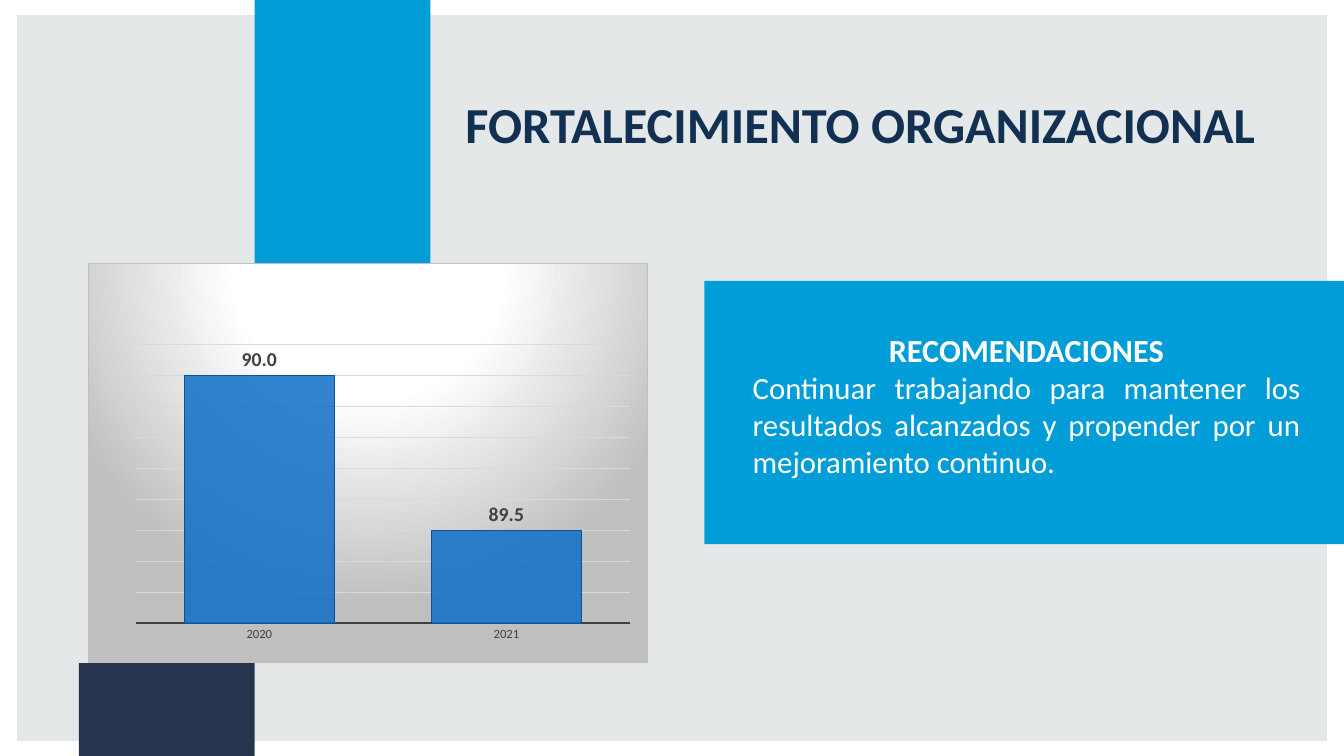
from lxml import etree
from pptx import Presentation
from pptx.chart.data import CategoryChartData
from pptx.dml.color import RGBColor
from pptx.enum import chart as ch, shapes, text
from pptx.oxml import parse_xml
from pptx.oxml.ns import nsdecls, qn
from pptx.util import Cm, Pt

FONT = "Calibri"
COLORS = {
    "panel": "E4E8E9", "accent": "009DD9", "navy": "26354D", "title": "113052",
    "white": "FFFFFF", "label": "404040", "grid": "D9D9D9", "frame": "BFBFBF",
    "bar": "0F6FC6", "bar_edge": "0B5394",
}


def rgb(name):
    return RGBColor.from_string(COLORS[name])


def set_font(font, size, color, bold=False):
    font.name, font.size, font.bold = FONT, Pt(size), bold
    font.color.rgb = rgb(color)


def set_line(line, color, width):
    line.color.rgb = rgb(color)
    line.width = Pt(width)


def add_block(page, box, color):
    block = page.shapes.add_shape(shapes.MSO_SHAPE.RECTANGLE, *map(Cm, box))
    block.shadow.inherit = False
    block.fill.solid()
    block.fill.fore_color.rgb = rgb(color)
    block.line.fill.background()


def add_text(page, box, paragraphs, anchor=text.MSO_ANCHOR.TOP, spacing=None):
    """Write (words, size, color, bold, alignment) paragraphs in a box."""
    frame = page.shapes.add_textbox(*map(Cm, box)).text_frame
    frame.word_wrap = True
    frame.vertical_anchor = anchor
    for index, (words, size, color, bold, alignment) in enumerate(paragraphs):
        para = frame.add_paragraph() if index else frame.paragraphs[0]
        para.text = words
        para.alignment = alignment
        para.line_spacing = spacing
        set_font(para.font, size, color, bold)


def add_backdrop(page, width, height):
    margin_x, margin_y = 0.43, 0.38
    column, band = 4.43, 6.63
    left, tab_top, panel_left = 1.99, 16.71, 17.75
    add_block(page, (margin_x, margin_y, width - 2 * margin_x, height - 2 * margin_y), "panel")
    add_block(page, (left + column, 0, column, band), "accent")
    add_block(page, (panel_left, 7.08, width - panel_left, band), "accent")
    add_block(page, (left, tab_top, column, height - tab_top), "navy")


def style_chart_area(chart):
    """Give the chart its radial gradient, border and inner plot layout."""
    stops = "".join(
        f'<a:gs pos="{position * 1000}"><a:srgbClr val="{COLORS[color]}"/></a:gs>'
        for position, color in ((0, "white"), (39, "white"), (100, "frame")))
    area = parse_xml(
        f'<c:spPr {nsdecls("c", "a")}><a:gradFill><a:gsLst>{stops}</a:gsLst>'
        '<a:path path="circle"><a:fillToRect l="50000" t="-80000" r="50000" b="180000"/></a:path>'
        f'</a:gradFill><a:ln w="9525"><a:solidFill><a:srgbClr val="{COLORS["frame"]}"/>'
        '</a:solidFill></a:ln></c:spPr>')
    body = chart.element.find(qn("c:chart"))
    body.addnext(area)

    plot_area = body.find(qn("c:plotArea"))
    for old in plot_area.findall(qn("c:layout")):
        plot_area.remove(old)
    settings = (("layoutTarget", "inner"), ("xMode", "edge"), ("yMode", "edge"),
                ("x", 0.085), ("y", 0.204), ("w", 0.884), ("h", 0.698))
    layout = etree.Element(qn("c:layout"))
    manual = etree.SubElement(layout, qn("c:manualLayout"))
    for tag, value in settings:
        etree.SubElement(manual, qn(f"c:{tag}"), val=str(value))
    plot_area.insert(0, layout)


def add_results_chart(page, box):
    data = CategoryChartData(number_format="0.0")
    data.categories = ["2020", "2021"]
    data.add_series("Series 1", (90, 89.5))
    chart = page.shapes.add_chart(ch.XL_CHART_TYPE.COLUMN_CLUSTERED, *map(Cm, box), data).chart
    chart.has_legend = chart.has_title = False
    set_font(chart.font, 10, "label")
    style_chart_area(chart)

    years = chart.category_axis
    years.major_tick_mark = years.minor_tick_mark = ch.XL_TICK_MARK.NONE
    set_font(years.tick_labels.font, 9, "label")
    set_line(years.format.line, "label", 1.5)

    scores = chart.value_axis
    scores.visible = False
    scores.minimum_scale, scores.maximum_scale, scores.major_unit = 89.2, 90.1, 0.1
    scores.has_major_gridlines = True
    set_line(scores.major_gridlines.format.line, "grid", 0.75)

    plot = chart.plots[0]
    plot.gap_width = 65
    plot.vary_by_categories = False
    bars = plot.series[0]
    bars.format.fill.solid()
    bars.format.fill.fore_color.rgb = rgb("bar")
    color = bars.format.fill.fore_color
    color.rgb = rgb("bar")
    set_line(bars.format.line, "bar_edge", 0.75)
    fill = bars.format.element if hasattr(bars.format, "element") else bars._element
    etree.SubElement(next(fill.iter(qn("a:srgbClr"))), qn("a:alpha"), val="85000")

    labels = bars.data_labels
    labels.show_value = True
    labels.number_format, labels.number_format_is_linked = "0.0", False
    labels.position = ch.XL_LABEL_POSITION.OUTSIDE_END
    set_font(labels.font, 14, "label", True)


def build_slide(deck):
    page = deck.slides.add_slide(deck.slide_layouts[6])
    center, justify = text.PP_ALIGN.CENTER, text.PP_ALIGN.JUSTIFY
    add_backdrop(page, deck.slide_width.cm, deck.slide_height.cm)
    add_text(page, (11.07, 0.53, 21.23, 3.48),
             [("FORTALECIMIENTO ORGANIZACIONAL", 36, "title", True, center)],
             text.MSO_ANCHOR.BOTTOM, 0.9)
    add_results_chart(page, (2.21, 6.63, 14.12, 10.08))
    add_text(page, (18.72, 8.2, 14.3, 4.06), [
        ("RECOMENDACIONES", 23, "white", True, center),
        ("Continuar trabajando para mantener los resultados alcanzados y propender "
         "por un mejoramiento continuo.", 22, "white", False, justify)])


def main():
    deck = Presentation()
    deck.slide_width, deck.slide_height = Cm(33.87), Cm(19.05)
    build_slide(deck)
    deck.save("out.pptx")


if __name__ == "__main__":
    main()
